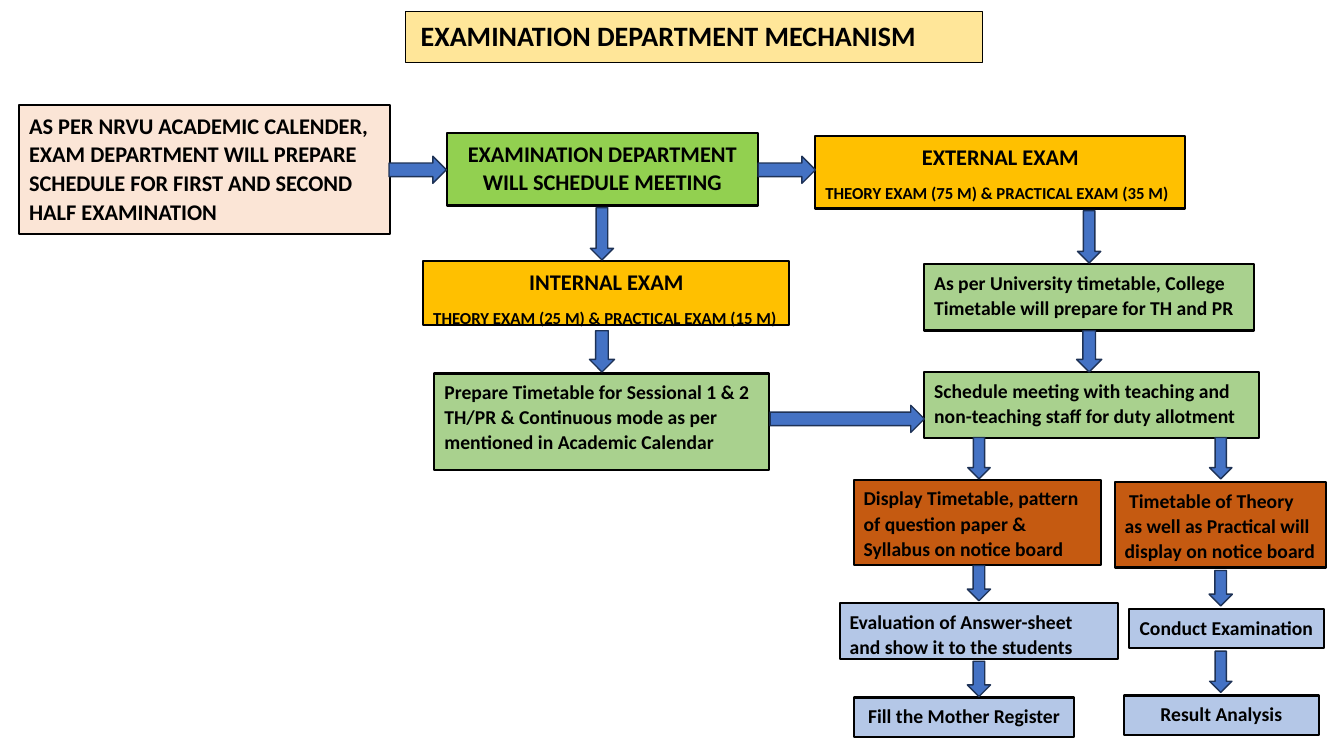
from pptx import Presentation
from pptx.dml.color import RGBColor
from pptx.enum.shapes import MSO_SHAPE
from pptx.enum.text import MSO_ANCHOR, PP_ALIGN
from pptx.util import Pt

COLORS = {
    "black": "000000", "cream": "FFE699", "peach": "FBE5D6", "lime": "92D050",
    "amber": "FFC000", "sage": "A9D18E", "rust": "C55A11", "sky": "B4C7E7",
    "arrow": "4472C4", "arrow_line": "1E3256",
}
LEFT, CENTER = PP_ALIGN.LEFT, PP_ALIGN.CENTER

presentation = Presentation()
presentation.slide_width, presentation.slide_height = Pt(960), Pt(540)
slide = presentation.slides.add_slide(presentation.slide_layouts[6])


def add_filled(kind, left, top, width, height, fill, line, line_width):
    shape = slide.shapes.add_shape(kind, Pt(left), Pt(top), Pt(width), Pt(height))
    shape.shadow.inherit = False
    shape.fill.solid()
    shape.fill.fore_color.rgb = RGBColor.from_string(COLORS[fill])
    shape.line.color.rgb = RGBColor.from_string(COLORS[line])
    shape.line.width = Pt(line_width)
    return shape


steps = [
    (289.5, 8, 412.5, 36.7, "cream", 0.5, 11,
     [("EXAMINATION DEPARTMENT MECHANISM", 20, LEFT)]),
    (13.7, 74.9, 265, 92.2, "peach", 1.5, 7.2,
     [("AS PER NRVU ACADEMIC CALENDER, EXAM DEPARTMENT WILL PREPARE "
       "SCHEDULE FOR FIRST AND SECOND HALF EXAMINATION", 16, LEFT)]),
    (319, 95, 222.5, 51.8, "lime", 1.5, 7.2,
     [("EXAMINATION DEPARTMENT WILL SCHEDULE MEETING", 16, CENTER)]),
    (582.5, 97.2, 264.2, 51.8, "amber", 1.5, 7.2,
     [("EXTERNAL EXAM", 16, CENTER),
      ("THEORY EXAM (75 M) & PRACTICAL EXAM (35 M)", 12, LEFT)]),
    (302.4, 186.5, 261.4, 45.4, "amber", 1.5, 7.2,
     [("INTERNAL EXAM", 16, CENTER),
      ("THEORY EXAM (25 M) & PRACTICAL EXAM (15 M)", 12, LEFT)]),
    (310.3, 266.8, 239, 69.1, "sage", 1.5, 7.2,
     [("Prepare Timetable for Sessional 1 & 2 TH/PR & Continuous mode "
       "as per mentioned in Academic Calendar", 14, LEFT)]),
    (660.2, 188.6, 235.4, 47.5, "sage", 1.5, 7.2,
     [("As per University timetable, College Timetable will prepare "
       "for TH and PR", 14, LEFT)]),
    (660.2, 265.7, 239, 47.5, "sage", 1.5, 7.2,
     [("Schedule meeting with teaching and non-teaching staff "
       "for duty allotment", 14, LEFT)]),
    (609.8, 342.7, 176.4, 61.2, "rust", 1.5, 7.2,
     [("Display Timetable, pattern of question paper & Syllabus "
       "on notice board", 14, LEFT)]),
    (796.3, 344.2, 150.7, 61.2, "rust", 1.5, 7.2,
     [(" Timetable of Theory\vas well as Practical will display "
       "on notice board", 14, LEFT)]),
    (806.4, 434.9, 139.2, 28.1, "sky", 1.5, 7.2,
     [("Conduct Examination", 14, CENTER)]),
    (599.8, 430.6, 198.7, 40.3, "sky", 1.5, 7.2,
     [("Evaluation of Answer-sheet\vand show it to the students", 14, LEFT)]),
    (802.8, 496.8, 139.2, 28.1, "sky", 1.5, 7.2,
     [("Result Analysis", 14, CENTER)]),
    (609.8, 498.2, 157.7, 28.1, "sky", 1.5, 7.2,
     [("Fill the Mother Register", 14, CENTER)]),
]

for left, top, width, height, fill, line_width, inset, lines in steps:
    shape = add_filled(MSO_SHAPE.RECTANGLE, left, top, width, height,
                       fill, "black", line_width)
    frame = shape.text_frame
    frame_format = {"word_wrap": True, "vertical_anchor": MSO_ANCHOR.TOP,
                    "margin_left": Pt(inset), "margin_right": Pt(7.2),
                    "margin_top": Pt(3.6), "margin_bottom": Pt(3.6)}
    for name, value in frame_format.items():
        setattr(frame, name, value)
    for index, (text, size, alignment) in enumerate(lines):
        paragraph = frame.add_paragraph() if index else frame.paragraphs[0]
        paragraph.text = text
        paragraph_format = {"alignment": alignment, "line_spacing": 1.07,
                            "space_after": Pt(8)}
        for name, value in paragraph_format.items():
            setattr(paragraph, name, value)
        font_format = {"name": "Calibri", "size": Pt(size), "bold": True}
        for run in paragraph.runs:
            for name, value in font_format.items():
                setattr(run.font, name, value)
            run.font.color.rgb = RGBColor.from_string(COLORS["black"])

down_arrows = {
    430: [(148.3, 16.6, 37.4), (236.2, 18, 29.5)],
    778: [(150.5, 16.6, 37.4), (236.2, 18, 29.5)],
    699.3: [(312.5, 16, 29.5), (403.9, 16.6, 25.2), (472.3, 16.6, 25.2)],
    872: [(312.5, 16, 29.5), (407.5, 16.6, 25.2), (465.1, 16, 29.5)],
}
right_arrows = [(298.4, 121.3, 41), (562, 121.3, 41), (605.2, 299.2, 110.2)]
right_thickness = 19.4

arrows = [(center, top, width, length, 0)
          for center, column in down_arrows.items()
          for top, width, length in column]
arrows += [(center, middle - length / 2, right_thickness, length, 270)
           for center, middle, length in right_arrows]

for center, top, width, length, rotation in arrows:
    arrow = add_filled(MSO_SHAPE.DOWN_ARROW, center - width / 2, top, width, length,
                       "arrow", "arrow_line", 1)
    arrow.rotation = rotation

presentation.save("out.pptx")
